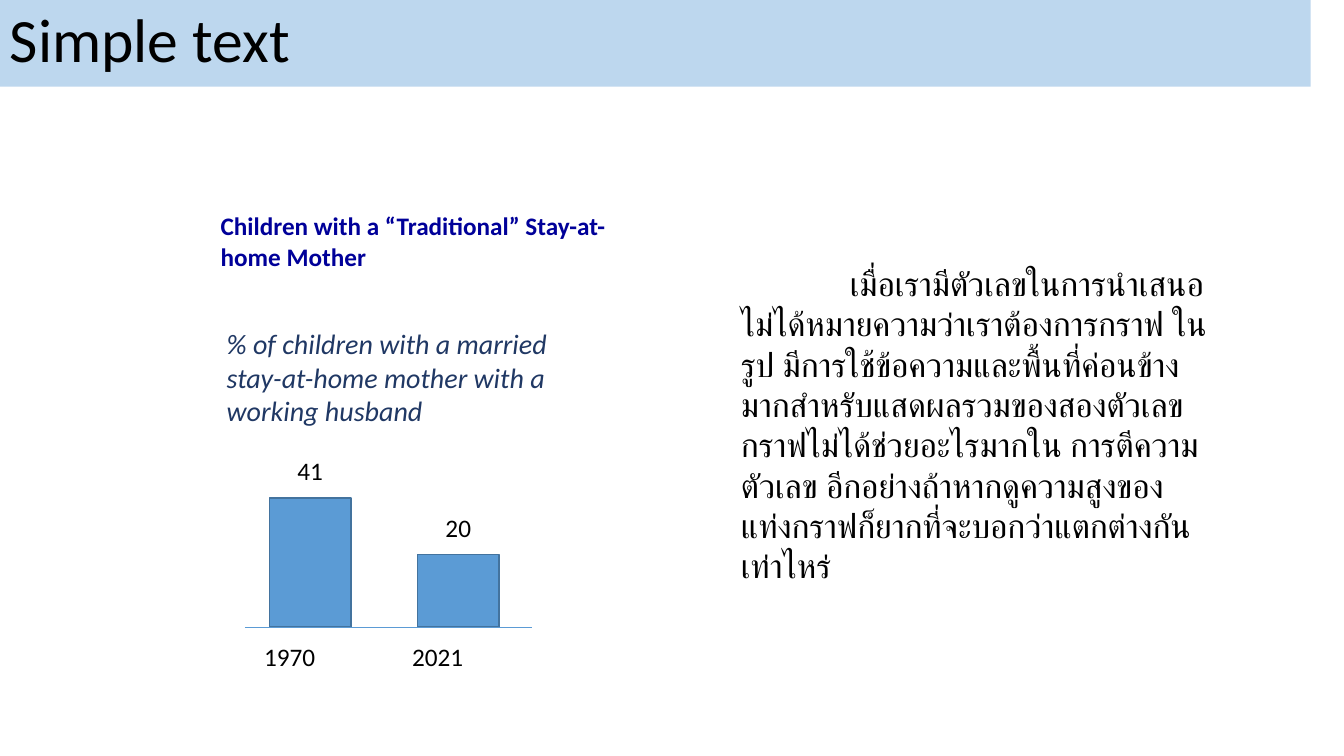
from dataclasses import dataclass
from typing import Optional

from lxml.etree import SubElement
from pptx import Presentation
from pptx.dml.color import RGBColor
from pptx.enum.shapes import MSO_CONNECTOR, MSO_SHAPE
from pptx.enum.text import MSO_ANCHOR, MSO_AUTO_SIZE, PP_ALIGN
from pptx.oxml.ns import qn
from pptx.shapes.autoshape import Shape
from pptx.slide import Slide
from pptx.util import Inches, Pt

BLACK = RGBColor(0x00, 0x00, 0x00)
BAR_BLUE = RGBColor(0x5B, 0x9B, 0xD5)
BAR_EDGE = RGBColor(0x43, 0x73, 0x9E)
HEADING_BLUE = RGBColor(0x00, 0x00, 0x99)
CAPTION_BLUE = RGBColor(0x20, 0x38, 0x64)
BANNER_BLUE = RGBColor(0xBD, 0xD7, 0xEE)

BASELINE = 6.22
BAR_WIDTH = 0.81
FIRST_LINE_INDENT = 1.08


@dataclass(frozen=True)
class Label:
    text: str
    left: float
    top: float
    width: float
    height: float
    size: float = 18
    color: RGBColor = BLACK
    font: str = "Calibri"
    bold: bool = False
    italic: bool = False
    align: Optional[PP_ALIGN] = None


@dataclass(frozen=True)
class Bar:
    year: str
    value: str
    left: float
    height: float


BARS = [Bar("1970", "41", 2.67, 1.28), Bar("2021", "20", 4.14, 0.72)]

TITLE = Label("Simple text", 0, -0.01, 13, 0.87, size=44)
HEADING = Label("Children with a “Traditional” Stay-at- home Mother",
                2.09, 2.04, 4.42, 0.71, color=HEADING_BLUE, bold=True)
CAPTION = Label("% of children with a married\vstay-at-home mother with a\vworking husband",
                2.15, 3.19, 3.86, 1.45, size=20, color=CAPTION_BLUE, italic=True)
COMMENTARY = Label(
    "เมื่อเรามีตัวเลขในการนำเสนอไม่ได้หมายความว่าเราต้องการกราฟ ในรูป "
    "มีการใช้ข้อความและพื้นที่ค่อนข้างมากสำหรับแสดผลรวมของสองตัวเลข "
    "กราฟไม่ได้ช่วยอะไรมากใน การตีความตัวเลข "
    "อีกอย่างถ้าหากดูความสูงของแท่งกราฟก็ยากที่จะบอกว่าแตกต่างกันเท่าไหร่",
    7.25, 2.56, 4.89, 2.52, size=24, font="Arial")


def add_label(page: Slide, label: Label) -> Shape:
    box = page.shapes.add_textbox(Inches(label.left), Inches(label.top),
                                  Inches(label.width), Inches(label.height))
    frame = box.text_frame
    frame.word_wrap = True
    frame.auto_size = MSO_AUTO_SIZE.SHAPE_TO_FIT_TEXT
    para = frame.paragraphs[0]
    para.text = label.text
    para.alignment = label.align
    for span in para.runs:
        span.font.name = label.font
        span.font.size = Pt(label.size)
        span.font.bold = label.bold
        span.font.italic = label.italic
        span.font.color.rgb = label.color
    return box


def add_bar(page: Slide, bar: Bar) -> None:
    top = BASELINE - bar.height
    column = page.shapes.add_shape(MSO_SHAPE.RECTANGLE, Inches(bar.left), Inches(top),
                                   Inches(BAR_WIDTH), Inches(bar.height))
    column.shadow.inherit = False
    column.fill.solid()
    column.fill.fore_color.rgb = BAR_BLUE
    column.line.color.rgb = BAR_EDGE
    column.line.width = Pt(1)
    add_label(page, Label(bar.value, bar.left, top - 0.47, BAR_WIDTH, 0.4,
                          align=PP_ALIGN.CENTER))
    add_label(page, Label(bar.year, bar.left - 0.15, BASELINE + 0.09, 1.38, 0.4))


def add_baseline(page: Slide) -> None:
    axis = page.shapes.add_connector(MSO_CONNECTOR.STRAIGHT, Inches(2.43), Inches(BASELINE),
                                     Inches(5.28), Inches(BASELINE))
    axis.line.color.rgb = BAR_BLUE
    axis.line.width = Pt(0.5)
    SubElement(axis._element.spPr, qn("a:effectLst"))


def add_title(page: Slide) -> None:
    banner = add_label(page, TITLE)
    banner.fill.solid()
    banner.fill.fore_color.rgb = BANNER_BLUE
    banner.text_frame.auto_size = MSO_AUTO_SIZE.NONE
    banner.text_frame.vertical_anchor = MSO_ANCHOR.MIDDLE
    banner.text_frame.paragraphs[0].line_spacing = 0.9


def add_commentary(page: Slide) -> None:
    box = add_label(page, COMMENTARY)
    properties = box.text_frame.paragraphs[0]._p.get_or_add_pPr()
    properties.set("indent", str(Inches(FIRST_LINE_INDENT)))


def main() -> None:
    deck = Presentation()
    deck.slide_width = Inches(13.33)
    deck.slide_height = Inches(7.5)
    page = deck.slides.add_slide(deck.slide_layouts[6])
    for bar in BARS:
        add_bar(page, bar)
    add_baseline(page)
    add_label(page, HEADING)
    add_label(page, CAPTION)
    add_commentary(page)
    add_title(page)
    deck.save("out.pptx")


if __name__ == "__main__":
    main()
